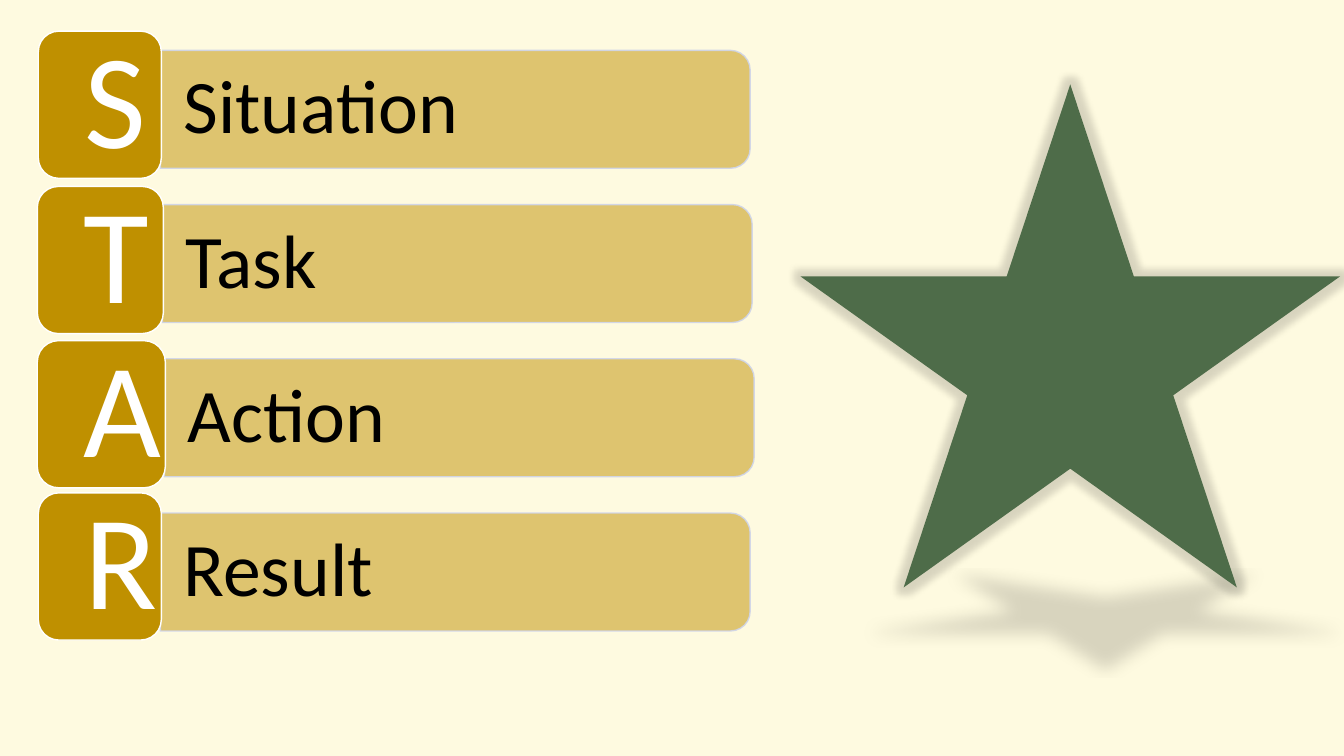
import pptx
import pptx.util
import pptx.dml.color
import pptx.enum.shapes
import pptx.enum.text
import pptx.oxml

Inches = pptx.util.Inches
Pt = pptx.util.Pt
Shape = pptx.enum.shapes.MSO_SHAPE
Align = pptx.enum.text.PP_ALIGN

COLORS = {
    "cream": "FEFAE0",
    "gold": "BF9000",
    "edge": "CFD5EA",
    "white": "FFFFFF",
    "black": "000000",
    "green": "4E6C49",
}
NAMESPACE = "http://schemas.openxmlformats.org/drawingml/2006/main"


def rgb(name):
    return pptx.dml.color.RGBColor.from_string(COLORS[name])


class Page:
    """Holds the style and the current slide."""

    font = "Calibri"

    def __init__(self, deck):
        self.slide = deck.slides.add_slide(deck.slide_layouts[6])
        self.slide.background.fill.solid()
        self.slide.background.fill.fore_color.rgb = rgb("cream")

    def shape(self, kind, left, top, width, height, fill, line, weight=1):
        shape = self.slide.shapes.add_shape(
            kind, Inches(left), Inches(top), Inches(width), Inches(height))
        shape.shadow.inherit = False
        shape.fill.solid()
        shape.fill.fore_color.rgb = rgb(fill)
        shape.line.color.rgb = rgb(line)
        shape.line.width = Pt(weight)
        return shape

    def set_text(self, shape, text, size, color, align, inset_x, inset_y):
        frame = shape.text_frame
        frame.word_wrap = True
        frame.vertical_anchor = pptx.enum.text.MSO_ANCHOR.MIDDLE
        frame.margin_left = frame.margin_right = Inches(inset_x)
        frame.margin_top = frame.margin_bottom = Inches(inset_y)
        para = frame.paragraphs[0]
        para.text = text
        para.alignment = align
        para.line_spacing = 0.9
        para.font.name = self.font
        para.font.size = Pt(size)
        para.font.color.rgb = rgb(color)

    def bar(self, left, top, width, height):
        # A quarter turn swaps the sides around the same centre
        shift = (width - height) / 2
        bar = self.shape(Shape.ROUND_2_SAME_RECTANGLE, left + shift, top - shift,
                         height, width, "gold", "edge")
        bar.rotation = 90
        self.fade(bar, "gold", 50)
        self.fade(bar, "edge", 90)

    def fade(self, shape, color, percent):
        for node in shape.element.spPr.iter(f"{{{NAMESPACE}}}srgbClr"):
            if node.get("val") == COLORS[color]:
                node.append(pptx.oxml.parse_xml(
                    f'<a:alpha xmlns:a="{NAMESPACE}" val="{percent * 1000}"/>'))

    def label(self, text, left, top, width, height):
        box = self.slide.shapes.add_textbox(
            Inches(left), Inches(top), Inches(width), Inches(height))
        self.set_text(box, text, 54, "black", Align.LEFT, 0.23, 0.11)

    def tile(self, letter, left, top, width, height):
        tile = self.shape(Shape.ROUNDED_RECTANGLE, left, top, width, height,
                          "gold", "white")
        self.set_text(tile, letter, 96, "white", Align.CENTER, 0.4, 0.2)

    def star(self, left, top, width, height):
        star = self.shape(Shape.STAR_5_POINT, left, top, width, height,
                          "green", "green", 6)
        properties = star.element.spPr
        outline = properties.find(f"{{{NAMESPACE}}}ln")
        outline.append(pptx.oxml.parse_xml(
            f'<a:miter xmlns:a="{NAMESPACE}" lim="800000"/>'))
        # Soft halo, and a flattened shadow cast below
        shade = (f'<a:srgbClr val="{COLORS["black"]}">'
                 '<a:alpha val="15000"/></a:srgbClr>')
        effects = properties.find(f"{{{NAMESPACE}}}effectLst")
        properties.replace(effects, pptx.oxml.parse_xml(
            f'<a:effectLst xmlns:a="{NAMESPACE}">'
            f'<a:glow rad="{Pt(11)}">{shade}</a:glow>'
            f'<a:outerShdw blurRad="{Pt(12)}" dist="{Pt(25)}" dir="0" '
            f'sx="90000" sy="-19000" rotWithShape="0">{shade}</a:outerShdw>'
            '</a:effectLst>'))


def main():
    deck = pptx.Presentation()
    deck.slide_width = Inches(13.33)
    deck.slide_height = Inches(7.5)
    page = Page(deck)

    # Four steps: word, tile left and top, bar left
    steps = [
        ("Situation", 0.38, 0.31, 1.59),
        ("Task", 0.37, 1.85, 1.61),
        ("Action", 0.37, 3.38, 1.63),
        ("Result", 0.38, 4.89, 1.59),
    ]
    bar_pitch = 1.53
    for row, (word, tile_left, tile_top, bar_left) in enumerate(steps):
        bar_top = 0.5 + row * bar_pitch
        page.bar(bar_left, bar_top, 5.85, 1.17)
        page.label(word, bar_left, bar_top + 0.06, 5.79, 1.05)
        page.tile(word[0], tile_left, tile_top, bar_left - tile_left + 0.01, 1.46)

    # Star
    page.star(8.07, 0.97, 5.09, 4.75)

    deck.save("out.pptx")


if __name__ == "__main__":
    main()
